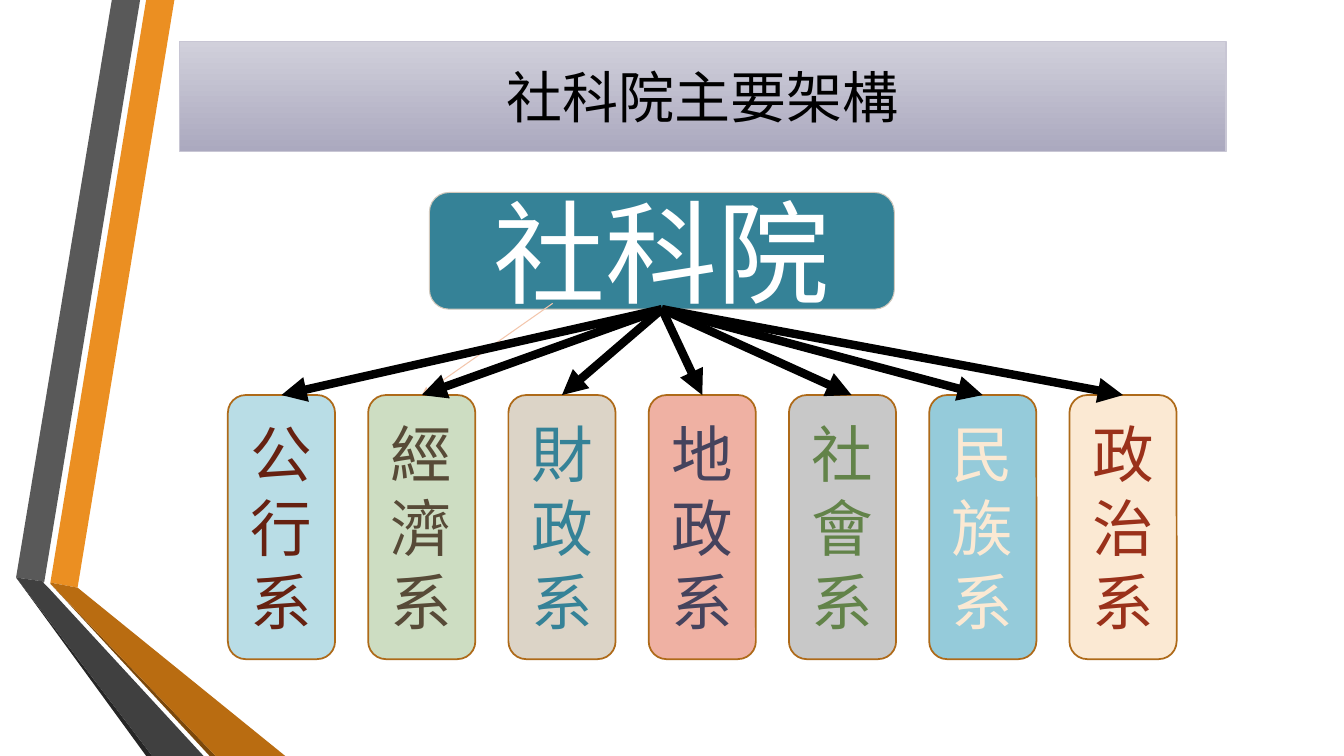
from dataclasses import dataclass

from lxml.etree import SubElement
from pptx import Presentation
from pptx.dml.color import RGBColor
from pptx.enum.shapes import MSO_CONNECTOR as Link, MSO_SHAPE as Preset
from pptx.enum.text import MSO_ANCHOR as Anchor, MSO_AUTO_SIZE as AutoSize, PP_ALIGN as Align
from pptx.oxml.ns import qn
from pptx.util import Inches, Pt


@dataclass(frozen=True)
class Theme:
    font: str = "Noto Sans CJK SC"
    title_size: int = 40
    college_size: int = 80
    department_size: int = 44
    black: str = "000000"
    white: str = "FFFFFF"
    title_top: str = "D1D0DB"
    title_bottom: str = "ABA9BF"
    title_line: str = "C8C6D4"
    college: str = "358297"
    college_line: str = "D1C8BC"
    department_line: str = "AE6A19"
    faint_arrow: str = "F3C6AC"
    thin: float = 0.75
    outline: float = 1.25
    thick: float = 6


@dataclass(frozen=True)
class Box:
    left: float
    top: float
    width: float
    height: float

    def lengths(self):
        return [Inches(value) for value in (self.left, self.top, self.width, self.height)]


THEME = Theme()
PAGE = Box(0, 0, 13.33, 7.5)
GRID_ROWS = 7.5

RIBBONS = [
    ("EB8F22", [(0.5, 5.78), (0.77, 5.83), (1.73, 0), (1.45, 0)]),
    ("595959", [(1.39, 0), (1.11, 0), (0.16, 5.73), (0.44, 5.77)]),
    ("262626", [(0.16, 5.73), (1.45, 7.5), (1.51, 7.5)]),
    ("7B480B", [(0.5, 5.79), (2.08, 7.5), (2.14, 7.5)]),
    ("B96C11", [(0.5, 5.79), (2.14, 7.5), (2.83, 7.5), (0.77, 5.83), (0.5, 5.78)]),
    ("404040", [(2.02, 7.5), (0.48, 5.83), (0.43, 5.78), (0.44, 5.77), (0.16, 5.73), (1.51, 7.5)]),
]

DEPARTMENTS = [
    ("公行系", "B9DDE6", "662111"),
    ("經濟系", "CDDDC2", "574A37"),
    ("財政系", "DCD4C7", "358297"),
    ("地政系", "EFB1A3", "45435D"),
    ("社會系", "C8C8C8", "628349"),
    ("民族系", "95CBDA", "FBE9D3"),
    ("政治系", "FBE9D3", "9A311A"),
]
OFF_CENTRE = {"社會系": 0.09}


def color(code):
    return RGBColor.from_string(code)


def set_line(line, code, width):
    line.color.rgb = color(code)
    line.width = Pt(width)


def write(shape, text, size, code):
    frame = shape.text_frame
    frame.word_wrap = True
    frame.auto_size = AutoSize.NONE
    frame.vertical_anchor = Anchor.MIDDLE
    para = frame.paragraphs[0]
    para.alignment = Align.CENTER
    span = para.add_run()
    span.text = text
    span.font.size = Pt(size)
    span.font.color.rgb = color(code)
    span.font.name = THEME.font
    SubElement(span.font._element, qn("a:ea"), typeface=THEME.font)


def add_ribbons(page, box):
    unit = Inches(box.height / GRID_ROWS)
    for code, points in RIBBONS:
        corners = [(Inches(box.left) + x * unit, Inches(box.top) + y * unit) for x, y in points]
        builder = page.shapes.build_freeform(*corners[0], scale=1.0)
        builder.add_line_segments(corners[1:], close=True)
        ribbon = builder.convert_to_shape()
        ribbon.shadow.inherit = False
        ribbon.fill.solid()
        ribbon.fill.fore_color.rgb = color(code)
        ribbon.line.fill.background()


def add_title(page, box):
    title = page.shapes.title
    title.left, title.top, title.width, title.height = box.lengths()
    title.fill.gradient()
    title.fill.gradient_angle = 270
    for stop, code in zip(title.fill.gradient_stops, (THEME.title_top, THEME.title_bottom)):
        stop.color.rgb = color(code)
    set_line(title.line, THEME.title_line, THEME.thin)
    write(title, "社科院主要架構", THEME.title_size, THEME.black)


def add_card(page, box, text, size, fill, ink, line, width):
    card = page.shapes.add_shape(Preset.ROUNDED_RECTANGLE, *box.lengths())
    card.shadow.inherit = False
    card.fill.solid()
    card.fill.fore_color.rgb = color(fill)
    set_line(card.line, line, width)
    write(card, text, size, ink)
    return card


def add_arrow(page, start, end, code, width):
    arrow = page.shapes.add_connector(Link.STRAIGHT, *start, *end)
    set_line(arrow.line, code, width)
    SubElement(arrow.line._get_or_add_ln(), qn("a:tailEnd"), type="triangle")
    SubElement(arrow._element.spPr, qn("a:effectLst"))
    return arrow


def add_departments(page, box):
    width = box.width * 0.113
    pitch = (box.width - width) / (len(DEPARTMENTS) - 1)
    return [
        add_card(page, Box(box.left + column * pitch, box.top, width, box.height), name,
                 THEME.department_size, fill, ink, THEME.department_line, THEME.outline)
        for column, (name, fill, ink) in enumerate(DEPARTMENTS)
    ]


def add_structure(page, box):
    college_box = Box(box.left + box.width * 0.2125, box.top, box.width * 0.49, box.height * 0.25)
    college = add_card(page, college_box, "社科院", THEME.college_size, THEME.college,
                       THEME.white, THEME.college_line, THEME.thin)
    row_height = box.height * 0.566
    row = Box(box.left, box.top + box.height - row_height, box.width, row_height)
    cards = add_departments(page, row)

    tops = [(card.left + card.width // 2, card.top) for card in cards]
    faint_start = (college.left + int(college.width * 0.265), college.top + int(college.height * 0.95))
    faint = add_arrow(page, faint_start, tops[1], THEME.faint_arrow, THEME.thin)
    faint.end_connect(cards[1], 0)

    root = (college.left + college.width // 2, college.top + college.height)
    for card, (x, y) in zip(cards, tops):
        shift = OFF_CENTRE.get(card.text_frame.text, 0)
        arrow = add_arrow(page, root, (x + Inches(shift), y), THEME.black, THEME.thick)
        arrow.begin_connect(college, 2)
        if not shift:
            arrow.end_connect(card, 0)


def main():
    deck = Presentation()
    deck.slide_width, deck.slide_height = Inches(PAGE.width), Inches(PAGE.height)
    page = deck.slides.add_slide(deck.slide_layouts[5])
    add_ribbons(page, PAGE)
    add_title(page, Box(1.78, 0.41, 10.38, 1.09))
    add_structure(page, Box(2.26, 1.91, 9.41, 4.63))
    deck.save("out.pptx")


if __name__ == "__main__":
    main()
